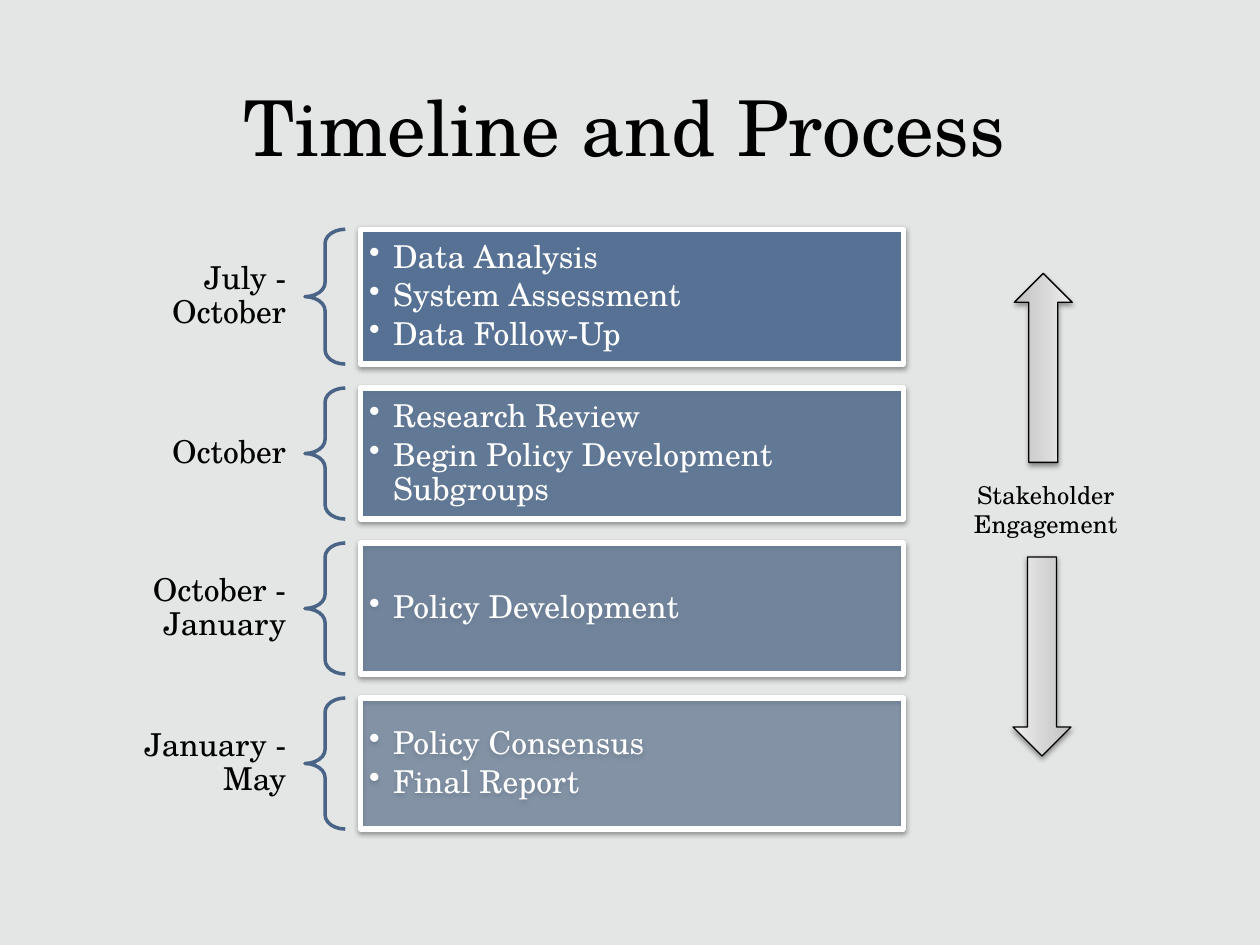
from lxml.etree import SubElement
from pptx import Presentation
from pptx.dml.color import RGBColor
from pptx.enum.shapes import MSO_SHAPE as Preset
from pptx.enum.text import MSO_ANCHOR as Anchor, MSO_AUTO_SIZE as AutoSize, PP_ALIGN as Align
from pptx.oxml.ns import qn
from pptx.util import Inches, Pt

TITLE = "Timeline and Process"
PHASES = [
    ("July - October", ["Data Analysis", "System Assessment", "Data Follow-Up"]),
    ("October", ["Research Review", "Begin Policy Development Subgroups"]),
    ("October - January", ["Policy Development"]),
    ("January - May", ["Policy Consensus", "Final Report"]),
]
SIDE_LABEL = "Stakeholder Engagement"

THEME = {
    "font": "TeX Gyre Schola",
    "background": "E4E5E5", "text": "000000", "light": "FFFFFF",
    "box": "506E94", "brace": "496486",
    "arrow": [(0, "BDBDBD"), (35, "D1D1D1"), (100, "EEEEEE")],
    "title_size": 44, "body_size": 18, "side_size": 14,
}
OPACITIES = [90, 77, 63, 50]

TOP, GAP = 1.82, 0.19
ROW_HEIGHTS = [1.07, 1.04, 1.04, 1.04]
COLUMNS = {"date": (0.83, 1.58), "brace": (2.42, 0.32), "box": (2.86, 4.31)}
ARROWS = [(90, 7.53, 2.69, 1.5), (270, 7.48, 4.98, 1.58)]
ARROW_THICKNESS = 0.46


def color(name):
    return RGBColor.from_string(THEME[name])


def place(left, top, width, height):
    return [Inches(value) for value in (left, top, width, height)]


def write(paragraph, text, size, color_name, align):
    paragraph.alignment = align
    run = paragraph.add_run()
    run.text = text
    run.font.name = THEME["font"]
    run.font.size = Pt(THEME[size])
    run.font.color.rgb = color(color_name)


def set_frame(frame, anchor, side, vertical):
    frame.word_wrap = True
    frame.vertical_anchor = anchor
    frame.margin_left = frame.margin_right = Inches(side)
    frame.margin_top = frame.margin_bottom = Inches(vertical)


def space(paragraph, after_share):
    paragraph.line_spacing = 0.9
    paragraph.space_after = Pt(THEME["body_size"] * after_share)


def add_bullet(paragraph):
    properties = paragraph._p.get_or_add_pPr()
    properties.set("marL", str(Inches(0.19)))
    properties.set("indent", str(-Inches(0.19)))
    SubElement(properties, qn("a:buChar"), char="•")


def add_preset(slide, preset, area, line_name, line_width):
    shape = slide.shapes.add_shape(preset, *place(*area))
    shape.shadow.inherit = False
    shape.line.color.rgb = color(line_name)
    shape.line.width = Pt(line_width)
    return shape


def add_shadow(shape):
    effects = shape._element.spPr.find(qn("a:effectLst"))
    shadow = SubElement(effects, qn("a:outerShdw"), blurRad=str(Pt(3.1)),
                        dist=str(Pt(1.6)), dir="5400000", rotWithShape="0")
    shade = SubElement(shadow, qn("a:srgbClr"), val=THEME["text"])
    SubElement(shade, qn("a:alpha"), val="38000")


def add_date(slide, text, top, height):
    left, width = COLUMNS["date"]
    box = slide.shapes.add_textbox(*place(left, top, width, height))
    set_frame(box.text_frame, Anchor.MIDDLE, 0.14, 0.05)
    paragraph = box.text_frame.paragraphs[0]
    write(paragraph, text, "body_size", "text", Align.RIGHT)
    space(paragraph, 0.35)


def add_brace(slide, top, height):
    left, width = COLUMNS["brace"]
    brace = add_preset(slide, Preset.LEFT_BRACE, (left, top, width, height), "brace", 2)
    brace.adjustments[0] = 0.35
    brace.fill.background()


def add_box(slide, steps, top, height, opacity):
    left, width = COLUMNS["box"]
    box = add_preset(slide, Preset.RECTANGLE, (left, top, width, height), "light", 3)
    box.fill.solid()
    box.fill.fore_color.rgb = color("box")
    fill_color = box._element.spPr.find(qn("a:solidFill")).find(qn("a:srgbClr"))
    SubElement(fill_color, qn("a:alpha"), val=str(opacity * 1000))
    add_shadow(box)
    frame = box.text_frame
    set_frame(frame, Anchor.MIDDLE, 0.07, 0.07)
    for index, step in enumerate(steps):
        paragraph = frame.add_paragraph() if index else frame.paragraphs[0]
        write(paragraph, step, "body_size", "light", Align.LEFT)
        space(paragraph, 0.15)
        add_bullet(paragraph)


def add_arrow(slide, rotation, left, top, length):
    area = (left, top, length, ARROW_THICKNESS)
    arrow = add_preset(slide, Preset.LEFT_ARROW, area, "text", 0.75)
    arrow.rotation = rotation
    arrow.fill.gradient()
    arrow.fill.gradient_angle = 90
    stops = arrow._element.spPr.find(qn("a:gradFill")).find(qn("a:gsLst"))
    for stop in list(stops):
        stops.remove(stop)
    for position, value in THEME["arrow"]:
        stop = SubElement(stops, qn("a:gs"), pos=str(position * 1000))
        SubElement(stop, qn("a:srgbClr"), val=value)
    add_shadow(arrow)


def add_side_label(slide):
    box = slide.shapes.add_textbox(*place(7.43, 3.76, 1.74, 0.57))
    set_frame(box.text_frame, Anchor.TOP, 0, 0.05)
    box.text_frame.auto_size = AutoSize.SHAPE_TO_FIT_TEXT
    write(box.text_frame.paragraphs[0], SIDE_LABEL, "side_size", "text", Align.CENTER)


def main():
    presentation = Presentation()
    presentation.slide_width, presentation.slide_height = Inches(10), Inches(7.5)
    slide = presentation.slides.add_slide(presentation.slide_layouts[5])
    slide.background.fill.solid()
    slide.background.fill.fore_color.rgb = color("background")

    title = slide.shapes.title
    title.left, title.top, title.width, title.height = place(0.25, 0.25, 9.42, 1.5)
    title.text_frame.vertical_anchor = Anchor.MIDDLE
    write(title.text_frame.paragraphs[0], TITLE, "title_size", "text", Align.CENTER)

    add_side_label(slide)
    for arrow in reversed(ARROWS):
        add_arrow(slide, *arrow)

    top = TOP
    for (date, steps), height, opacity in zip(PHASES, ROW_HEIGHTS, OPACITIES):
        add_date(slide, date, top, height)
        add_brace(slide, top, height)
        add_box(slide, steps, top, height, opacity)
        top += height + GAP

    presentation.save("out.pptx")


if __name__ == "__main__":
    main()
